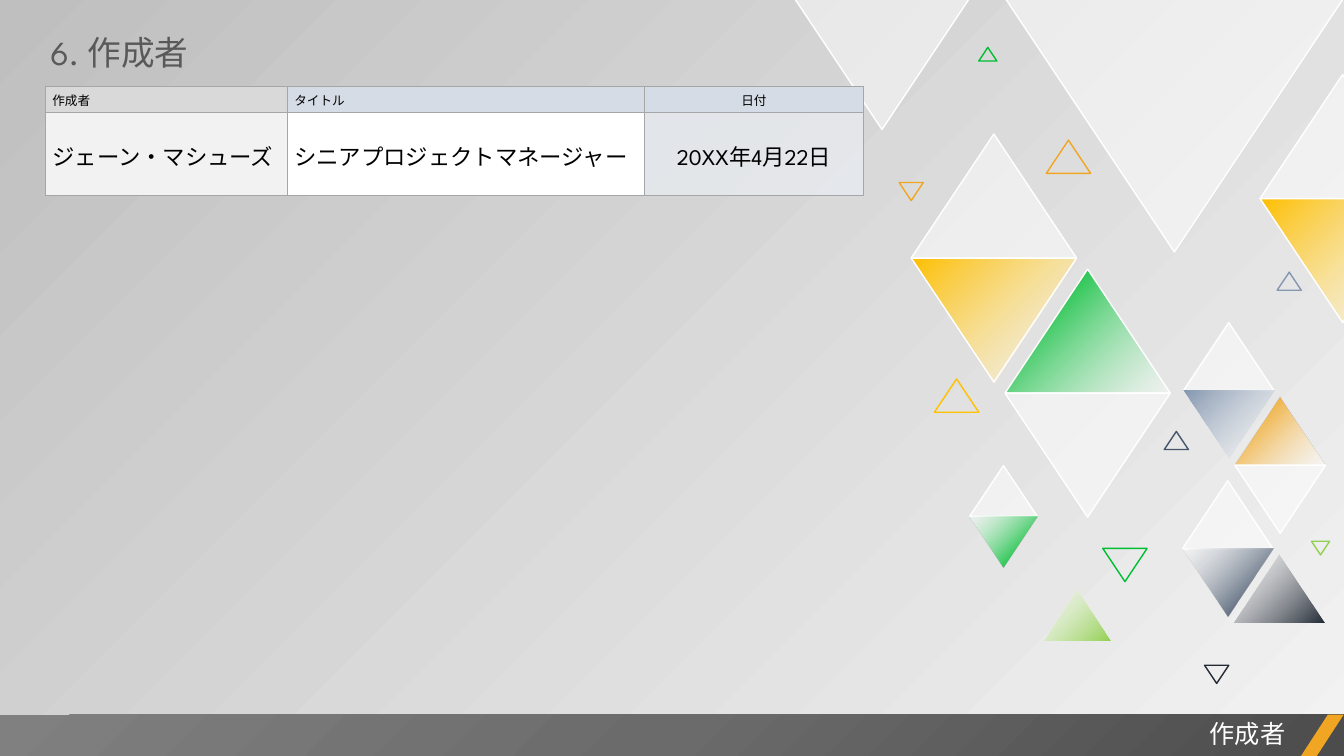
from lxml.etree import SubElement
from pptx import Presentation
from pptx.dml.color import RGBColor
from pptx.enum.shapes import MSO_SHAPE as Preset
from pptx.enum.text import MSO_ANCHOR as Anchor, MSO_AUTO_SIZE as AutoSize, PP_ALIGN as Align
from pptx.oxml.ns import qn
from pptx.util import Inches, Pt

CELL = 0.1  # inches per grid column and row
COLUMNS, ROWS = 133.33, 75
WHITE, GREEN, LIME = "FFFFFF", "00BD32", "92D050"
YELLOW, ORANGE = "FFC000", "F0A622"
STEEL, SLATE, NAVY = "8497B0", "44546A", "222A35"
PALE_BLUE = "D6DCE5"
GLASS = (WHITE, 50)


def grid(cells):
    return Inches(cells * CELL)


def color(hex_code):
    return RGBColor.from_string(hex_code)


def fade(hex_code):
    """Colour that dissolves into clear white."""
    return [(0, hex_code, 100), (100, WHITE, 50)]


def glow(hex_code):
    """Clear white that grows into colour."""
    return [(0, WHITE, 50), (82, hex_code, 100)]


def write_text(frame, text, size=9, ink="000000", align=Align.LEFT, leading=None, gap=None):
    paragraph = frame.paragraphs[0]
    paragraph.alignment = align
    if leading:
        paragraph.line_spacing = leading
    if gap:
        paragraph.space_before = paragraph.space_after = Pt(gap)
    run = paragraph.add_run()
    run.text = text
    run.font.name, run.font.size = "League Spartan", Pt(size)
    run.font.color.rgb = color(ink)


def paint_solid(fill, element, hex_code, opacity=100):
    fill.solid()
    fill.fore_color.rgb = color(hex_code)
    if opacity < 100:
        swatch = element.find(f".//{qn('a:solidFill')}/{qn('a:srgbClr')}")
        SubElement(swatch, qn("a:alpha"), val=str(opacity * 1000))


def paint_gradient(fill, element, stops, radial=False):
    fill.gradient()
    gradient = element.find(f".//{qn('a:gradFill')}")
    for child in list(gradient):
        gradient.remove(child)
    gradient.set("rotWithShape", "1")
    stop_list = SubElement(gradient, qn("a:gsLst"))
    for position, hex_code, opacity in stops:
        stop = SubElement(stop_list, qn("a:gs"), pos=str(position * 1000))
        swatch = SubElement(stop, qn("a:srgbClr"), val=hex_code)
        if opacity < 100:
            SubElement(swatch, qn("a:alpha"), val=str(opacity * 1000))
    if radial:
        circle = SubElement(gradient, qn("a:path"), path="circle")
        SubElement(circle, qn("a:fillToRect"), l="100000", t="100000")
    else:
        SubElement(gradient, qn("a:lin"), ang=str(225 * 60000), scaled="0")


class Board:
    """Draws on one slide; all lengths are grid columns and rows."""

    def __init__(self, slide):
        self.slide = slide

    def background(self, stops):
        paint_gradient(self.slide.background.fill, self.slide.element, stops)

    def title(self, text, x, y, width, height):
        heading = self.slide.shapes.title
        heading.left, heading.top = grid(x), grid(y)
        heading.width, heading.height = grid(width), grid(height)
        frame = heading.text_frame
        frame.word_wrap, frame.auto_size = False, AutoSize.SHAPE_TO_FIT_TEXT
        frame.vertical_anchor = Anchor.TOP
        write_text(frame, text, size=24, ink="595959")

    def label(self, text, x, y, width, height, **style):
        box = self.slide.shapes.add_textbox(grid(x), grid(y), grid(width), grid(height))
        box.text_frame.word_wrap = True
        box.text_frame.auto_size = AutoSize.SHAPE_TO_FIT_TEXT
        write_text(box.text_frame, text, **style)

    def shape(self, preset, x, y, width, height, paint=None, outline=None, radial=False):
        """Paint is a (colour, opacity) pair, a list of gradient stops, or None."""
        figure = self.slide.shapes.add_shape(preset, grid(x), grid(y), grid(width), grid(height))
        figure.shadow.inherit = False
        if isinstance(paint, list):
            paint_gradient(figure.fill, figure.element, paint, radial)
        elif paint:
            paint_solid(figure.fill, figure.element, *paint)
        else:
            figure.fill.background()
        if outline:
            figure.line.color.rgb, figure.line.width = color(outline), Pt(1)
        else:
            figure.line.fill.background()
        return figure

    def triangle(self, x, y, width, down, paint=None, outline=None):
        if paint == GLASS or (paint and width > 10):
            outline = WHITE
        figure = self.shape(Preset.ISOSCELES_TRIANGLE, x, y, width, width * 0.75, paint, outline)
        figure.rotation = 180 if down else 0

    def diamond(self, x, y, width, upper, lower):
        self.triangle(x, y, width, False, upper)
        self.triangle(x, y + width * 0.75, width, True, lower)

    def table(self, x, y, widths, heights, texts, fills, sizes, aligns):
        frame = self.slide.shapes.add_table(len(heights), len(widths), grid(x), grid(y),
                                            grid(sum(widths)), grid(sum(heights)))
        table = frame.table
        for column, width in zip(table.columns, widths):
            column.width = grid(width)
        for r, height in enumerate(heights):
            table.rows[r].height = grid(height)
            for c, align in enumerate(aligns):
                cell = table.cell(r, c)
                cell.vertical_anchor = Anchor.MIDDLE
                cell.margin_left = cell.margin_right = Inches(0.07)
                cell.margin_top = cell.margin_bottom = 0
                write_text(cell.text_frame, texts[r][c], size=sizes[r], align=align,
                           leading=1.07, gap=3)
                properties = cell._tc.get_or_add_tcPr()
                paint_solid(cell.fill, properties, *fills[r][c])
                for order, side in enumerate(("lnL", "lnR", "lnT", "lnB")):
                    border = SubElement(properties, qn(f"a:{side}"), w=str(Pt(1)))
                    ink = SubElement(border, qn("a:solidFill"))
                    SubElement(ink, qn("a:srgbClr"), val="A6A6A6")
                    properties.insert(order, border)


def main():
    deck = Presentation()
    deck.slide_width, deck.slide_height = grid(COLUMNS), grid(ROWS)
    board = Board(deck.slides.add_slide(deck.slide_layouts[5]))
    board.background([(0, "F2F2F2", 40), (100, "BFBFBF", 100)])

    # Two-part diamonds: x, y, width, upper paint, lower paint
    for diamond in (
        (90.4, 13.3, 16.4, GLASS, fade(YELLOW)),
        (99.7, 26.7, 16.4, glow(GREEN), GLASS),
        (117.3, 47.7, 9, GLASS, glow(SLATE)),
        (117.4, 32, 9, GLASS, fade(STEEL)),
        (122.5, 39.4, 9, glow(ORANGE), GLASS),
        (96.2, 46.2, 6.7, GLASS, glow(GREEN)),
        (125, 7.4, 16.4, GLASS, fade(YELLOW)),
    ):
        board.diamond(*diamond)

    # Single filled triangles: x, y, width, pointing down, paint
    for triangle in (
        (99.7, -0.2, 33.6, True, GLASS),
        (78.8, -0.2, 17.4, True, GLASS),
        (122.4, 55, 9, False, fade(NAVY)),
        (103.5, 58.5, 6.7, False, fade(LIME)),
    ):
        board.triangle(*triangle)

    # Small outlined triangles: x, y, width, pointing down, outline
    for x, y, width, down, outline in (
        (109.4, 54.4, 4.4, True, GREEN),
        (92.7, 37.6, 4.4, False, YELLOW),
        (103.8, 13.9, 4.4, False, ORANGE),
        (115.5, 42.8, 2.4, False, SLATE),
        (119.5, 66, 2.4, True, NAVY),
        (89.2, 18.1, 2.4, True, ORANGE),
        (126.7, 27, 2.4, False, STEEL),
        (97.1, 4.7, 1.8, False, GREEN),
        (130.1, 53.7, 1.8, True, LIME),
    ):
        board.triangle(x, y, width, down, outline=outline)

    # Footer bar
    board.shape(Preset.RECTANGLE, 0, 70.9, COLUMNS, 4.2, radial=True,
                paint=[(0, "4C4C4C", 100), (50, "6B6B6B", 100), (100, "808080", 100)])
    accent = board.shape(Preset.PARALLELOGRAM, 129, 70.9, 4.3, 4.2, (ORANGE, 100))
    accent.adjustments[0] = 0.65
    board.label("作成者", 52.5, 70.8, 76, 4, size=18, ink=WHITE, align=Align.RIGHT)

    # Author table and title
    board.table(
        4.5, 8.6, widths=(24, 35.4, 21.8), heights=(2.6, 8.2),
        texts=(("作成者", "タイトル", "日付"),
               ("ジェーン・マシューズ", "シニアプロジェクトマネージャー", "20XX年4月22日")),
        fills=((("D9D9D9",), (PALE_BLUE,), (PALE_BLUE,)),
               (("F2F2F2",), (WHITE,), ("EAEEF3", 70))),
        sizes=(9, 16), aligns=(Align.LEFT, Align.LEFT, Align.CENTER))
    board.title("6. 作成者", 4, 2.7, 27.3, 5)

    deck.save("out.pptx")


if __name__ == "__main__":
    main()
